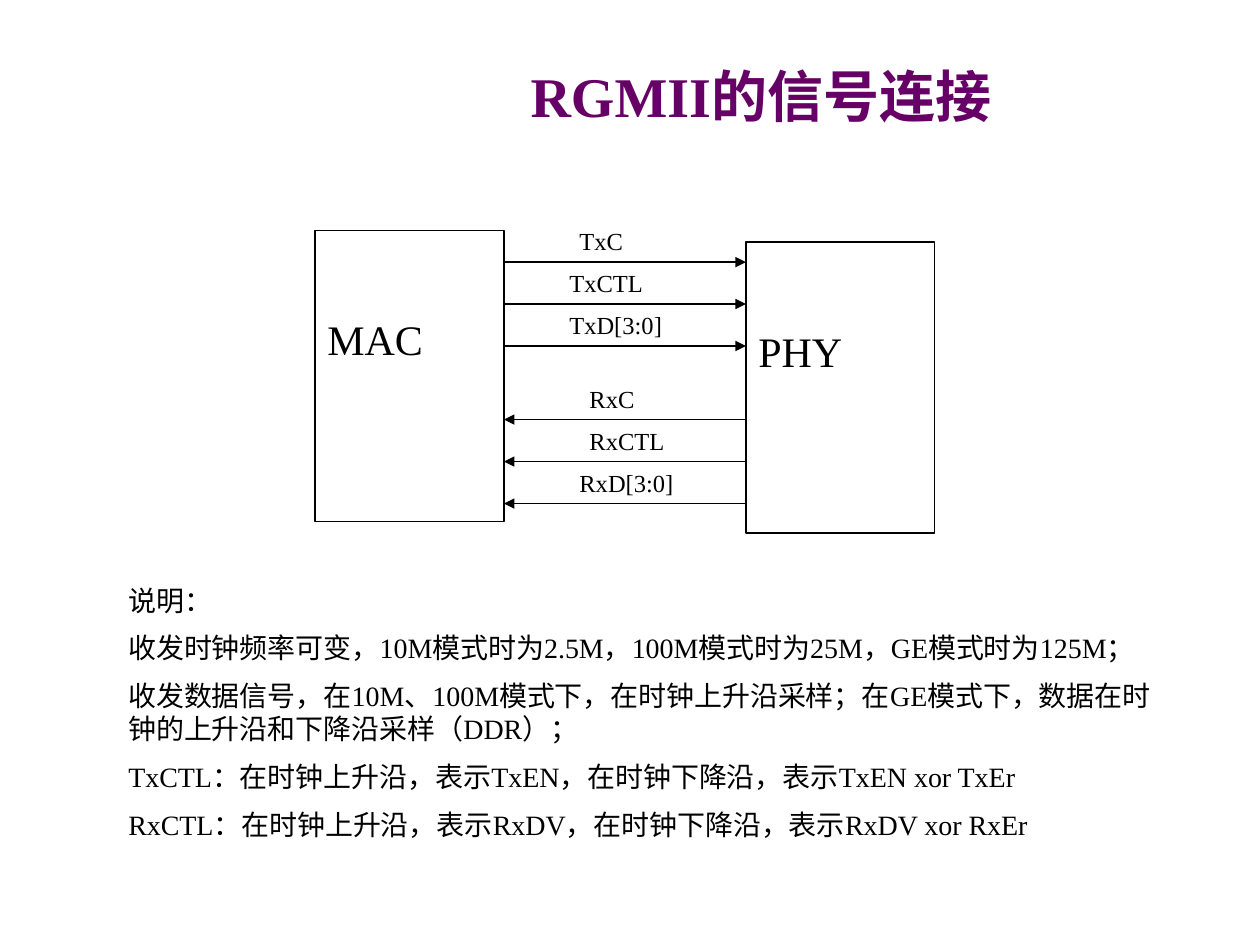
from dataclasses import dataclass

from lxml.etree import SubElement
from pptx import Presentation
from pptx.dml.color import RGBColor
from pptx.enum.shapes import MSO_CONNECTOR, MSO_SHAPE
from pptx.enum.text import MSO_ANCHOR, PP_ALIGN
from pptx.oxml.ns import qn
from pptx.util import Inches, Pt


@dataclass(frozen=True)
class Theme:
    font: str = "Times New Roman"
    ink: RGBColor = RGBColor(0, 0, 0)
    plum: RGBColor = RGBColor(0x66, 0, 0x66)
    paper: RGBColor = RGBColor(255, 255, 255)
    title: int = 32
    block: int = 24
    body: int = 16
    label: int = 14
    line: float = 0.75
    gap: int = 8


class Deck:
    def __init__(self, theme):
        self.theme = theme
        self.prs = Presentation()
        self.prs.slide_width, self.prs.slide_height = Inches(10), Inches(7.5)
        self.slide = self.prs.slides.add_slide(self.prs.slide_layouts[6])

    def fill_text(self, frame, lines, size, color=None, bold=False, align=PP_ALIGN.LEFT):
        frame.word_wrap = True
        for i, line in enumerate(lines):
            para = frame.add_paragraph() if i else frame.paragraphs[0]
            para.alignment = align
            if i:
                para.space_before = Pt(self.theme.gap)
            run = para.add_run()
            run.text = line
            font = run.font
            font.name, font.size, font.bold = self.theme.font, Pt(size), bold
            font.color.rgb = color or self.theme.ink

    def rect(self, x, y, w, h):
        shape = self.slide.shapes.add_shape(
            MSO_SHAPE.RECTANGLE, Inches(x), Inches(y), Inches(w), Inches(h))
        shape.shadow.inherit = False
        return shape

    def title(self, text, x, y, w, h):
        shape = self.rect(x, y, w, h)
        shape.fill.solid()
        shape.fill.fore_color.rgb = self.theme.paper
        shape.line.fill.background()
        shape.text_frame.vertical_anchor = MSO_ANCHOR.MIDDLE
        self.fill_text(shape.text_frame, [text], self.theme.title,
                       self.theme.plum, True, PP_ALIGN.CENTER)

    def block(self, name, x, y, w, h):
        shape = self.rect(x, y, w, h)
        shape.fill.background()
        shape.line.color.rgb = self.theme.ink
        shape.line.width = Pt(self.theme.line)
        frame = shape.text_frame
        frame.vertical_anchor = MSO_ANCHOR.TOP
        frame.margin_top = Inches(0.66)
        self.fill_text(frame, [name], self.theme.block)

    def text(self, lines, x, y, w, h, size):
        box = self.slide.shapes.add_textbox(
            Inches(x), Inches(y), Inches(w), Inches(h))
        self.fill_text(box.text_frame, lines, size)

    def arrow(self, start, end, y):
        line = self.slide.shapes.add_connector(
            MSO_CONNECTOR.STRAIGHT, Inches(start), Inches(y), Inches(end), Inches(y))
        line.line.color.rgb = self.theme.ink
        line.line.width = Pt(self.theme.line)
        props = line._element.spPr
        SubElement(props.find(qn("a:ln")), qn("a:tailEnd"), type="triangle")
        SubElement(props, qn("a:effectLst"))


def main():
    theme = Theme()
    deck = Deck(theme)

    # Title
    deck.title("RGMII的信号连接", 2.83, 0.42, 6.42, 0.67)

    # Two chips
    width, height = 1.5, 2.31
    mac, phy = 2.5, 5.92
    deck.block("MAC", mac, 1.83, width, height)
    deck.block("PHY", phy, 1.92, width, height)

    # Signals: first line, ends, then name with label left and width
    left, pitch = mac + width, 1 / 3
    groups = [
        (2.08, left, phy,
         [("TxC", 4.5, 0.7), ("TxCTL", 4.42, 0.92), ("TxD[3:0]", 4.42, 1.08)]),
        (3.33, phy, left,
         [("RxC", 4.58, 0.7), ("RxCTL", 4.58, 0.9), ("RxD[3:0]", 4.5, 1.08)]),
    ]
    for top, start, end, names in groups:
        for i, (name, x, w) in enumerate(names):
            y = top + i * pitch
            deck.arrow(start, end, y)
            deck.text([name], x, y - pitch, w, pitch, theme.label)

    # Notes on the signals
    notes = [
        "说明：",
        "收发时钟频率可变，10M模式时为2.5M，100M模式时为25M，GE模式时为125M；",
        "收发数据信号，在10M、100M模式下，在时钟上升沿采样；"
        "在GE模式下，数据在时钟的上升沿和下降沿采样（DDR）；",
        "TxCTL：在时钟上升沿，表示TxEN，在时钟下降沿，表示TxEN xor TxEr",
        "RxCTL：在时钟上升沿，表示RxDV，在时钟下降沿，表示RxDV xor RxEr",
    ]
    deck.text(notes, 0.92, 4.58, 8.5, 2.24, theme.body)

    deck.prs.save("out.pptx")


if __name__ == "__main__":
    main()
